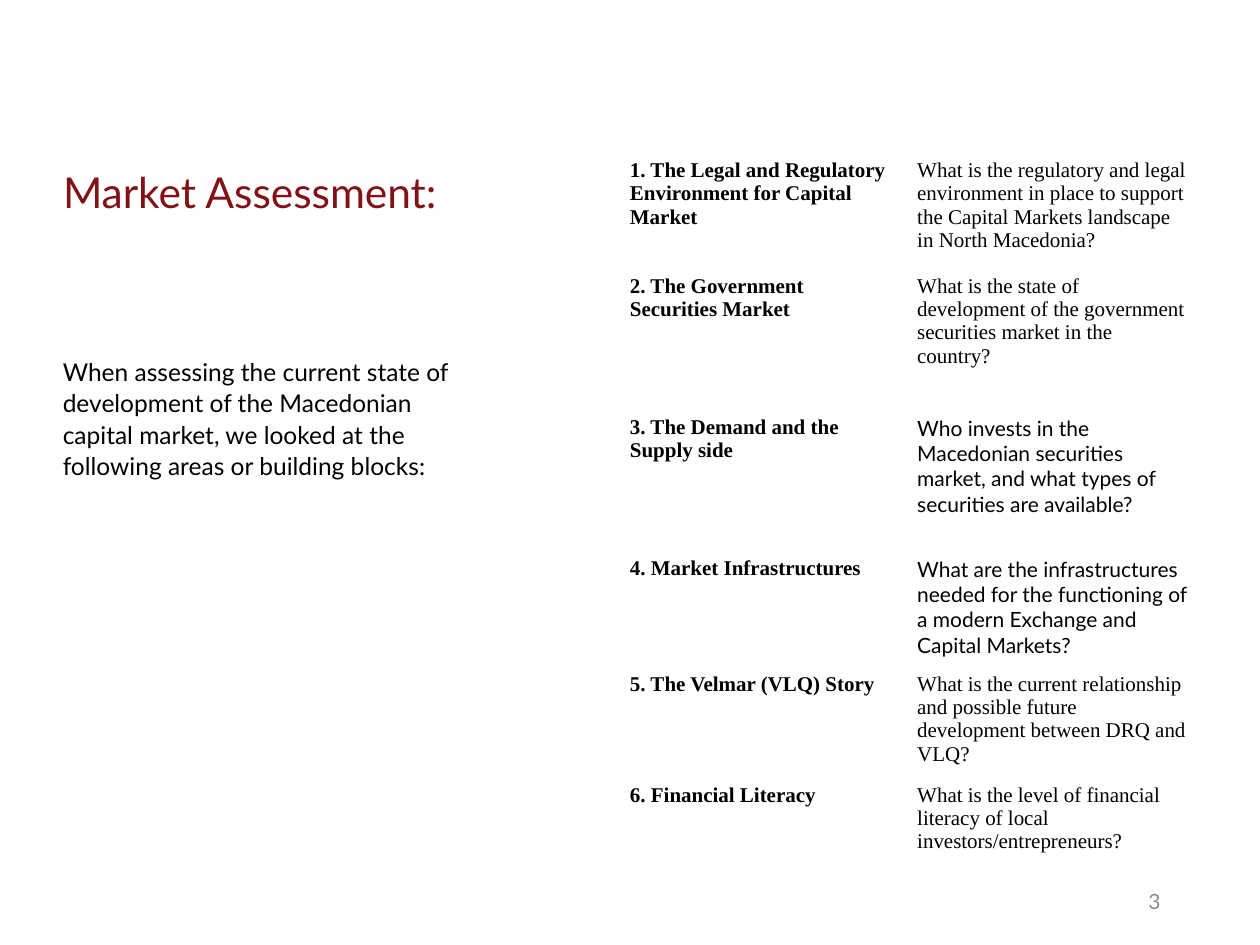
from pptx import Presentation
from pptx.dml.color import RGBColor
from pptx.enum.text import MSO_ANCHOR, MSO_AUTO_SIZE, PP_ALIGN
from pptx.util import Inches, Pt

BLACK = RGBColor(0x00, 0x00, 0x00)
WHITE = RGBColor(0xFF, 0xFF, 0xFF)
MAROON = RGBColor(0x81, 0x13, 0x17)
GRAY = RGBColor(0x8C, 0x8C, 0x8C)
SANS = "Lato"
SERIF = "Times New Roman"

INTRODUCTION = [
    "When assessing the current state of",
    "development of the Macedonian",
    "capital market, we looked at the",
    "following areas or building blocks:",
]
COLUMN_WIDTHS = [2.28, 2.34]
BUILDING_BLOCKS = [
    (0.92, "1. The Legal and Regulatory Environment for Capital Market",
     "What is the regulatory and legal environment in place to support "
     "the Capital Markets landscape in North Macedonia?", SERIF),
    (1.12, "2. The Government Securities Market",
     "What is the state of development of the government securities "
     "market in the country?", SERIF),
    (1.12, "3. The Demand and the Supply side",
     "Who invests in the Macedonian securities market, and what types of "
     "securities are available?", SANS),
    (0.92, "4. Market Infrastructures",
     "What are the infrastructures needed for the functioning of a modern "
     "Exchange and Capital Markets?", SANS),
    (0.83, "5. The Velmar (VLQ) Story",
     "What is the current relationship and possible future development "
     "between DRQ and VLQ?", SERIF),
    (0.72, "6. Financial Literacy",
     "What is the level of financial literacy of local "
     "investors/entrepreneurs?", SERIF),
]


def write_text(frame, lines, size=12, font=SANS, color=BLACK, bold=False,
               align=PP_ALIGN.LEFT, anchor=MSO_ANCHOR.TOP, spacing=1.0, gap=0):
    frame.word_wrap = True
    frame.vertical_anchor = anchor
    for index, line in enumerate(lines):
        paragraph = frame.paragraphs[0] if index == 0 else frame.add_paragraph()
        paragraph.alignment = align
        paragraph.line_spacing = spacing
        paragraph.space_before = Pt(gap if index else 0)
        run = paragraph.add_run()
        run.text = line
        run.font.name = font
        run.font.size = Pt(size)
        run.font.bold = bold
        run.font.color.rgb = color


def set_title(slide, text):
    title = slide.shapes.title
    title.left, title.top = Inches(0.4), Inches(1.15)
    title.width, title.height = Inches(7.48), Inches(0.63)
    title.text_frame.auto_size = MSO_AUTO_SIZE.NONE
    write_text(title.text_frame, [text], size=24.3, color=MAROON,
               anchor=MSO_ANCHOR.BOTTOM, spacing=0.9)


def add_text(slide, left, top, width, height, lines, **text_format):
    box = slide.shapes.add_textbox(Inches(left), Inches(top),
                                   Inches(width), Inches(height))
    write_text(box.text_frame, lines, **text_format)


def fill_cell(cell, text, **text_format):
    cell.fill.solid()
    cell.fill.fore_color.rgb = WHITE
    cell.margin_left = cell.margin_right = Inches(0.09)
    cell.margin_top = cell.margin_bottom = Inches(0.04)
    write_text(cell.text_frame, [text], **text_format)


def add_blocks_table(slide):
    height = sum(block[0] for block in BUILDING_BLOCKS)
    table = slide.shapes.add_table(
        len(BUILDING_BLOCKS), len(COLUMN_WIDTHS), Inches(4.91), Inches(1.22),
        Inches(sum(COLUMN_WIDTHS)), Inches(height)).table
    for column, width in zip(table.columns, COLUMN_WIDTHS):
        column.width = Inches(width)
    for row, (row_height, area, question, font) in zip(table.rows, BUILDING_BLOCKS):
        row.height = Inches(row_height)
        fill_cell(row.cells[0], area, font=SERIF, bold=True)
        fill_cell(row.cells[1], question, font=font)


def main():
    presentation = Presentation()
    presentation.slide_width, presentation.slide_height = Inches(10), Inches(7.5)
    slide = presentation.slides.add_slide(presentation.slide_layouts[5])
    set_title(slide, "Market Assessment:")
    add_text(slide, 0.4, 2.81, 4.3, 1.2, INTRODUCTION, size=14, spacing=0.9, gap=2.8)
    add_blocks_table(slide)
    add_text(slide, 7.06, 6.95, 2.25, 0.4, ["3"], color=GRAY,
             align=PP_ALIGN.RIGHT, anchor=MSO_ANCHOR.MIDDLE)
    presentation.save("out.pptx")


if __name__ == "__main__":
    main()
